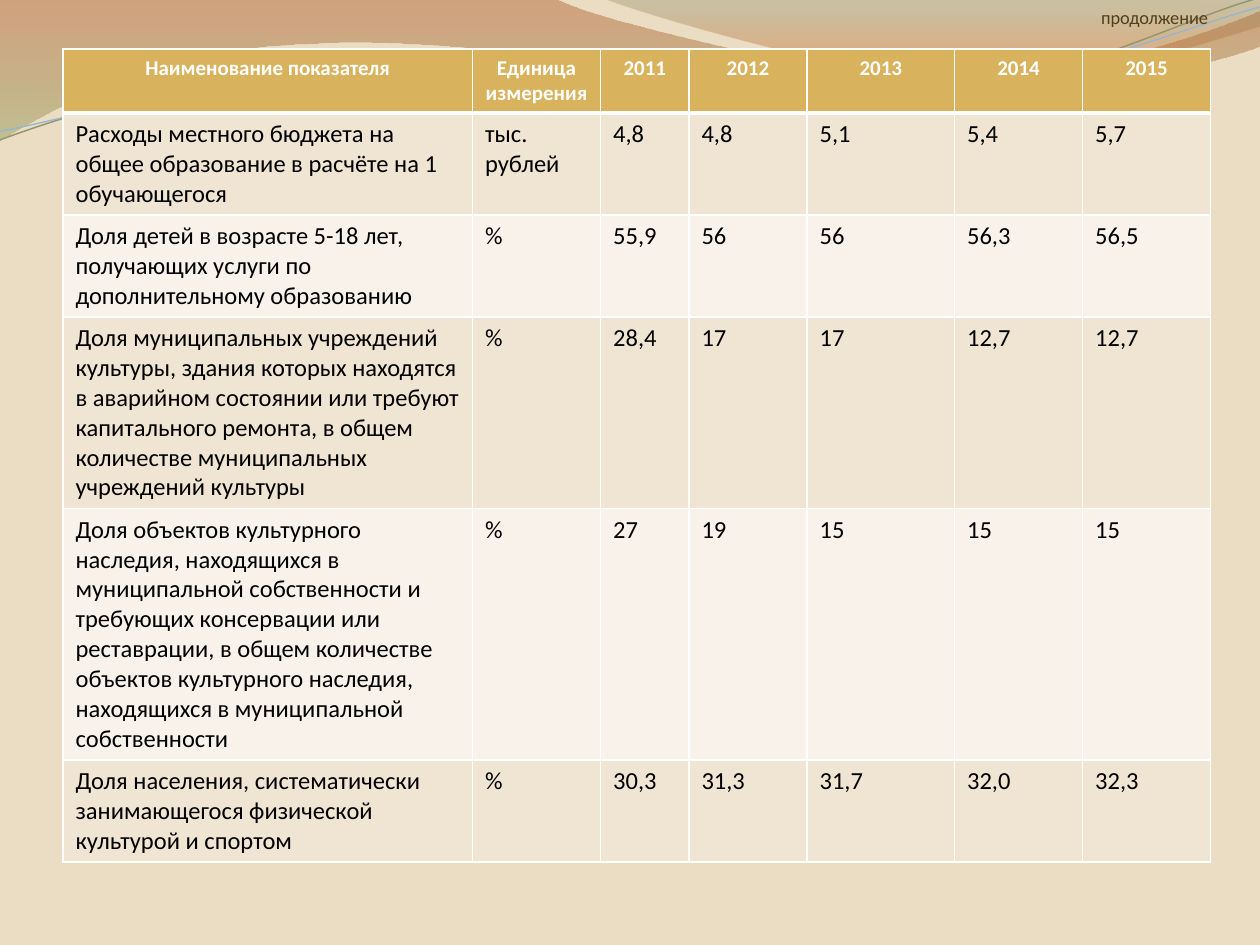
from lxml.etree import SubElement
from pptx import Presentation
from pptx.dml.color import RGBColor
from pptx.enum.text import PP_ALIGN as Align
from pptx.oxml import parse_xml
from pptx.oxml.ns import nsdecls, qn
from pptx.util import Pt

FONT = "Calibri"
HUES = {
    "back": "EBDDC3", "head": "D8B25C", "odd": "F0E4D2", "even": "F8F2EA",
    "white": "FFFFFF", "black": "000000", "note": "513E1B",
    "rust": "AF5C29", "moss": "9DA66B", "sage": "7D835B", "flame": "DD6B24",
    "olive": "929772", "sky": "94B6D2",
}
NOTE = "продолжение"
HEAD = ["Наименование показателя", "Единица измерения",
        "2011", "2012", "2013", "2014", "2015"]
ROWS = [
    ["Расходы местного бюджета на общее образование в расчёте на 1 обучающегося",
     "тыс. рублей", "4,8", "4,8", "5,1", "5,4", "5,7"],
    ["Доля детей в возрасте 5-18 лет, получающих услуги по дополнительному образованию",
     "%", "55,9", "56", "56", "56,3", "56,5"],
    ["Доля муниципальных учреждений культуры, здания которых находятся в аварийном "
     "состоянии или требуют капитального ремонта, в общем количестве муниципальных "
     "учреждений культуры",
     "%", "28,4", "17", "17", "12,7", "12,7"],
    ["Доля объектов культурного наследия, находящихся в муниципальной собственности "
     "и требующих консервации или реставрации, в общем количестве объектов "
     "культурного наследия, находящихся в муниципальной собственности",
     "%", "27", "19", "15", "15", "15"],
    ["Доля населения, систематически занимающегося физической культурой и спортом",
     "%", "30,3", "31,3", "31,7", "32,0", "32,3"],
]
WIDTHS = [234, 73.2, 50.5, 67.5, 84.3, 73.2, 73.2]
LEAST, TALL = 29.2, 458.6
TILT = 357.3

SHEETS = [
    ([[(0, 0)], [(317, -1)],
      [(343, 12), (478, 45), (546, 45)],
      [(614, 45), (690, 19), (720, 6)], [(721, 26)],
      [(708, 32), (626, 55), (537, 54)],
      [(447, 54), (275, 20), (185, 24.5)],
      [(93, 26), (33, 60), (-1, 81)], [(0, 0)]],
     [(0, "rust", 45), (1, "moss", 55)]),
    ([[(345, -1)],
      [(367, 8), (491, 45), (554, 47)],
      [(616, 50), (692, 23), (720, 15)], [(720, 0)], [(345, -1)]],
     [(0, "sage", 30), (0.8, "flame", 45)]),
]
WAVES = [
    ([[(-1.4, 63)],
      [(34.2, 51.7), (114.3, 29.4), (199.4, 29.4)],
      [(284.4, 30.4), (425.9, 67.2), (512, 65.2)],
      [(599.3, 62.3), (676, 25.9), (720.6, 15.9)]], "olive", 0.85),
    ([[(-1.1, 58.1)],
      [(33.1, 53.7), (118.2, 32.6), (204.3, 32.7)],
      [(290.3, 33.7), (429.1, 63.3), (515.3, 61.4)],
      [(601.5, 59.4), (679, 30), (721.4, 21)]], "sky", 0.75),
]


def rgb(name):
    return RGBColor.from_string(HUES[name])


def outline(shapes, steps, close):
    dots = [(Pt(x), Pt(y)) for step in steps for x, y in step]
    pen = shapes.build_freeform(*dots[0])
    pen.add_line_segments(dots[1:], close=close)
    shape = pen.convert_to_shape()
    shape.shadow.inherit = False
    legs = iter(list(shape._element.iter(qn("a:lnTo"))))
    for step in steps[1:]:
        parts = [next(legs) for dot in step]
        if len(step) == 3:
            curve = parse_xml(f'<a:cubicBezTo {nsdecls("a")}/>')
            parts[0].addprevious(curve)
            for part in parts:
                curve.append(part[0])
                part.getparent().remove(part)
    return shape


def add_sheet(slide, steps, stops):
    shape = outline(slide.shapes, steps, True)
    shape.line.fill.background()
    shape.fill.gradient()
    shape.fill.gradient_angle = 270
    for stop, (place, hue, alpha) in zip(shape.fill.gradient_stops, stops):
        stop.position = place
        stop.color.rgb = rgb(hue)
    tags = shape._element.spPr.iter(qn("a:srgbClr"))
    for tag, (place, hue, alpha) in zip(tags, stops):
        SubElement(tag, qn("a:alpha"), val=str(alpha * 1000))


def add_wave(group, steps, hue, width):
    shape = outline(group.shapes, steps, False)
    shape.rotation = TILT
    shape.fill.background()
    shape.line.color.rgb = rgb(hue)
    shape.line.width = Pt(width)


def write(frame, text, size, hue, align, bold=False):
    para = frame.paragraphs[0]
    para.alignment = align
    run = para.add_run()
    run.text = text
    font = run.font
    font.name, font.size, font.bold = FONT, Pt(size), bold
    font.color.rgb = rgb(hue)


def edge(cell, row):
    props = cell._tc.get_or_add_tcPr()
    wide = {"T": 3 if row == 1 else 1, "B": 3 if row == 0 else 1}
    for i, side in enumerate("LRTB"):
        props.insert(i, parse_xml(
            f'<a:ln{side} {nsdecls("a")} w="{Pt(wide.get(side, 1))}"><a:solidFill>'
            f'<a:srgbClr val="{HUES["white"]}"/></a:solidFill></a:ln{side}>'))


def add_grid(slide):
    data = [HEAD] + ROWS
    frame = slide.shapes.add_table(
        len(data), len(HEAD), Pt(36), Pt(28.1), Pt(sum(WIDTHS)), Pt(TALL))
    grid = frame.table
    for col, width in zip(grid.columns, WIDTHS):
        col.width = Pt(width)
    for r, (line, texts) in enumerate(zip(grid.rows, data)):
        line.height = Pt(LEAST)
        for cell, text in zip(line.cells, texts):
            cell.fill.solid()
            if r == 0:
                cell.fill.fore_color.rgb = rgb("head")
                write(cell.text_frame, text, 12, "white", Align.CENTER, True)
            else:
                cell.fill.fore_color.rgb = rgb("odd" if r % 2 else "even")
                write(cell.text_frame, text, 14, "black", Align.LEFT)
            edge(cell, r)
    frame.height = Pt(TALL)


def main():
    deck = Presentation()
    deck.slide_width, deck.slide_height = Pt(720), Pt(540)
    slide = deck.slides.add_slide(deck.slide_layouts[6])
    slide.background.fill.solid()
    slide.background.fill.fore_color.rgb = rgb("back")
    for sheet in SHEETS:
        add_sheet(slide, *sheet)
    group = slide.shapes.add_group_shape()
    for wave in WAVES:
        add_wave(group, *wave)
    add_grid(slide)
    box = slide.shapes.add_textbox(Pt(590.4), Pt(0), Pt(107), Pt(20))
    box.text_frame.word_wrap = True
    write(box.text_frame, NOTE, 10.5, "note", Align.RIGHT)
    deck.save("out.pptx")


if __name__ == "__main__":
    main()
